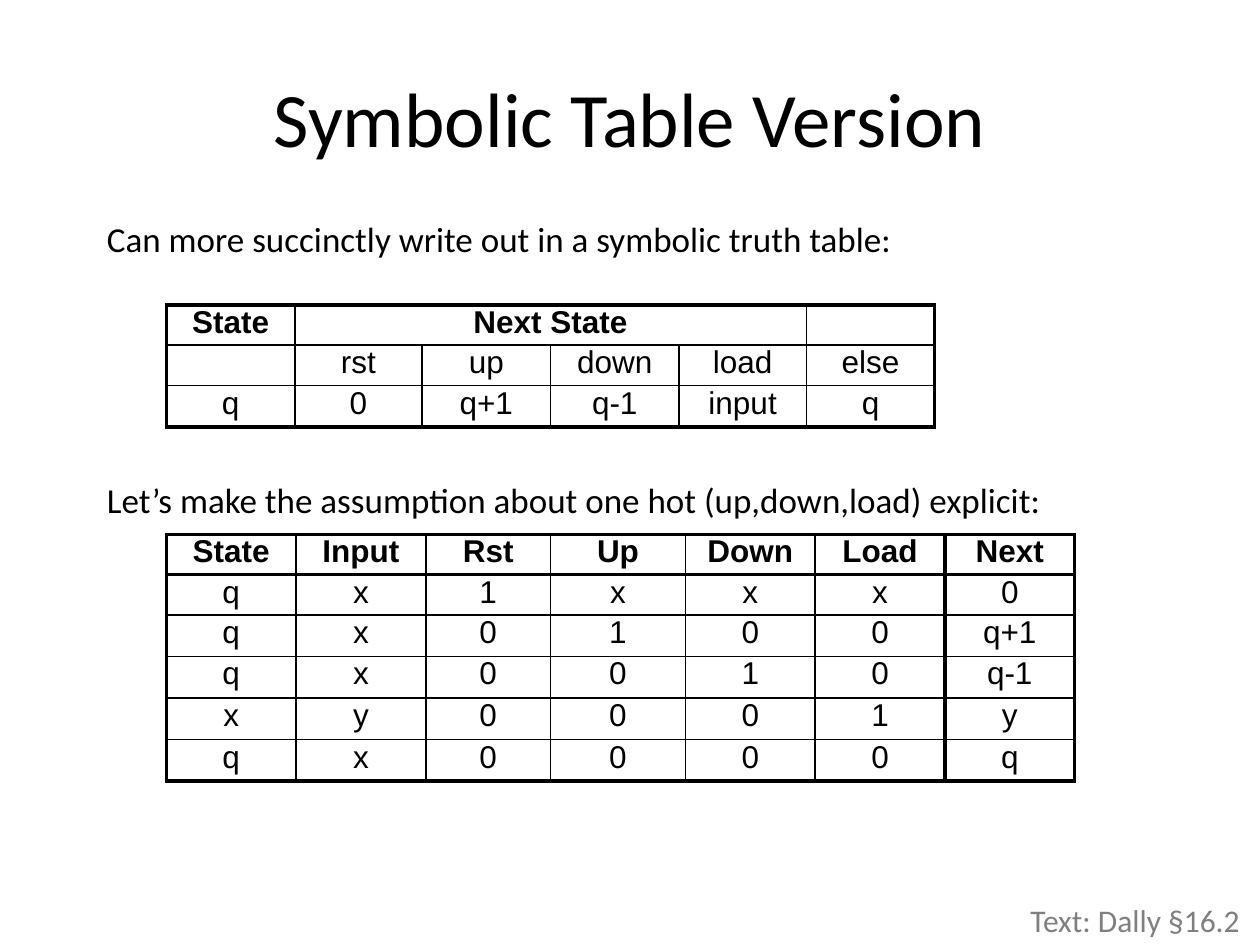
from lxml.etree import SubElement
from pptx import Presentation
from pptx.dml.color import RGBColor
from pptx.enum.text import MSO_ANCHOR as Anchor, MSO_AUTO_SIZE as AutoSize, PP_ALIGN as Align
from pptx.oxml.ns import qn
from pptx.util import Inches, Pt

BLACK = RGBColor(0x00, 0x00, 0x00)
GRAY = RGBColor(0x80, 0x80, 0x80)
THIN, THICK = Pt(1), Pt(2.25)
TABLE_LEFT = 1.32

NEXT_STATE_ROWS = [
    ["State", "Next State", "", "", "", ""],
    ["", "rst", "up", "down", "load", "else"],
    ["q", "0", "q+1", "q-1", "input", "q"],
]
ONE_HOT_ROWS = [
    ["State", "Input", "Rst", "Up", "Down", "Load", "Next"],
    ["q", "x", "1", "x", "x", "x", "0"],
    ["q", "x", "0", "1", "0", "0", "q+1"],
    ["q", "x", "0", "0", "1", "0", "q-1"],
    ["x", "y", "0", "0", "0", "1", "y"],
    ["q", "x", "0", "0", "0", "0", "q"],
]


def set_values(target, values):
    for name, value in values.items():
        setattr(target, name, value)


def write_text(para, text, color=BLACK, **font):
    span = para.add_run()
    span.text = text
    span.font.color.rgb = color
    set_values(span.font, font)


def add_text(page, text, place, size, color=BLACK, align=Align.LEFT, **frame):
    box = page.shapes.add_textbox(*map(Inches, place))
    set_values(box.text_frame, {"word_wrap": True, **frame})
    para = box.text_frame.paragraphs[0]
    para.alignment = align
    write_text(para, text, color, name="Calibri", size=Pt(size))


def draw_border(cell, side, width):
    properties = cell._tc.get_or_add_tcPr()
    line = SubElement(properties, qn(f"a:ln{side}"), w=str(width))
    fill = SubElement(line, qn("a:solidFill"))
    SubElement(fill, qn("a:srgbClr"), val=str(BLACK))


def format_cell(cell, text, bold, borders):
    set_values(cell, dict.fromkeys(
        ["margin_left", "margin_right", "margin_top", "margin_bottom"], 0))
    for side, width in borders.items():
        draw_border(cell, side, width)
    cell.fill.background()
    para = cell.text_frame.paragraphs[0]
    para.alignment = Align.CENTER
    if text:
        write_text(para, text, name="Arial", size=Pt(18), bold=bold)


def add_truth_table(page, rows, top, widths, heights, thick_rows, thick_columns):
    place = (TABLE_LEFT, top, sum(widths), sum(heights))
    table = page.shapes.add_table(len(rows), len(widths), *map(Inches, place)).table
    set_values(table, {"first_row": False, "horz_banding": False})
    for column, width in zip(table.columns, widths):
        column.width = Inches(width)
    for row, height in zip(table.rows, heights):
        row.height = Inches(height)
    for r, texts in enumerate(rows):
        for c, text in enumerate(texts):
            borders = {
                "L": THICK if c in thick_columns else THIN,
                "R": THICK if c + 1 in thick_columns else THIN,
                "T": THICK if r in thick_rows else THIN,
                "B": THICK if r + 1 in thick_rows else THIN,
            }
            format_cell(table.cell(r, c), text, r == 0, borders)
    return table


def main():
    deck = Presentation()
    set_values(deck, {"slide_width": Inches(10), "slide_height": Inches(7.5)})
    page = deck.slides.add_slide(deck.slide_layouts[6])

    add_text(page, "Symbolic Table Version", (0.5, 0.3, 9, 1.25), 44,
             align=Align.CENTER, vertical_anchor=Anchor.MIDDLE)

    next_state = add_truth_table(
        page, NEXT_STATE_ROWS, 2.42, [1.02, 1.01, 1.02, 1.02, 1.01, 1.02],
        [0.32, 0.32, 0.33], thick_rows={0, 3}, thick_columns={0, 6})
    next_state.cell(0, 1).merge(next_state.cell(0, 4))

    add_truth_table(
        page, ONE_HOT_ROWS, 4.24, [1.03, 1.03, 0.99, 1.07, 1.03, 1.03, 1.03],
        [0.32] * 2 + [0.33] * 4, thick_rows={0, 1, 6}, thick_columns={0, 6, 7})

    add_text(page, "Text: Dally §16.2", (8.08, 7.1, 1.91, 0.4), 18, GRAY,
             auto_size=AutoSize.SHAPE_TO_FIT_TEXT)
    captions = [
        ("Can more succinctly write out in a symbolic truth table:", 1.68, 6.49),
        ("Let’s make the assumption about one hot (up,down,load) explicit:", 3.75, 7.68),
    ]
    for text, top, width in captions:
        add_text(page, text, (0.75, top, width, 0.44), 20,
                 word_wrap=False, auto_size=AutoSize.SHAPE_TO_FIT_TEXT)

    deck.save("out.pptx")


if __name__ == "__main__":
    main()
